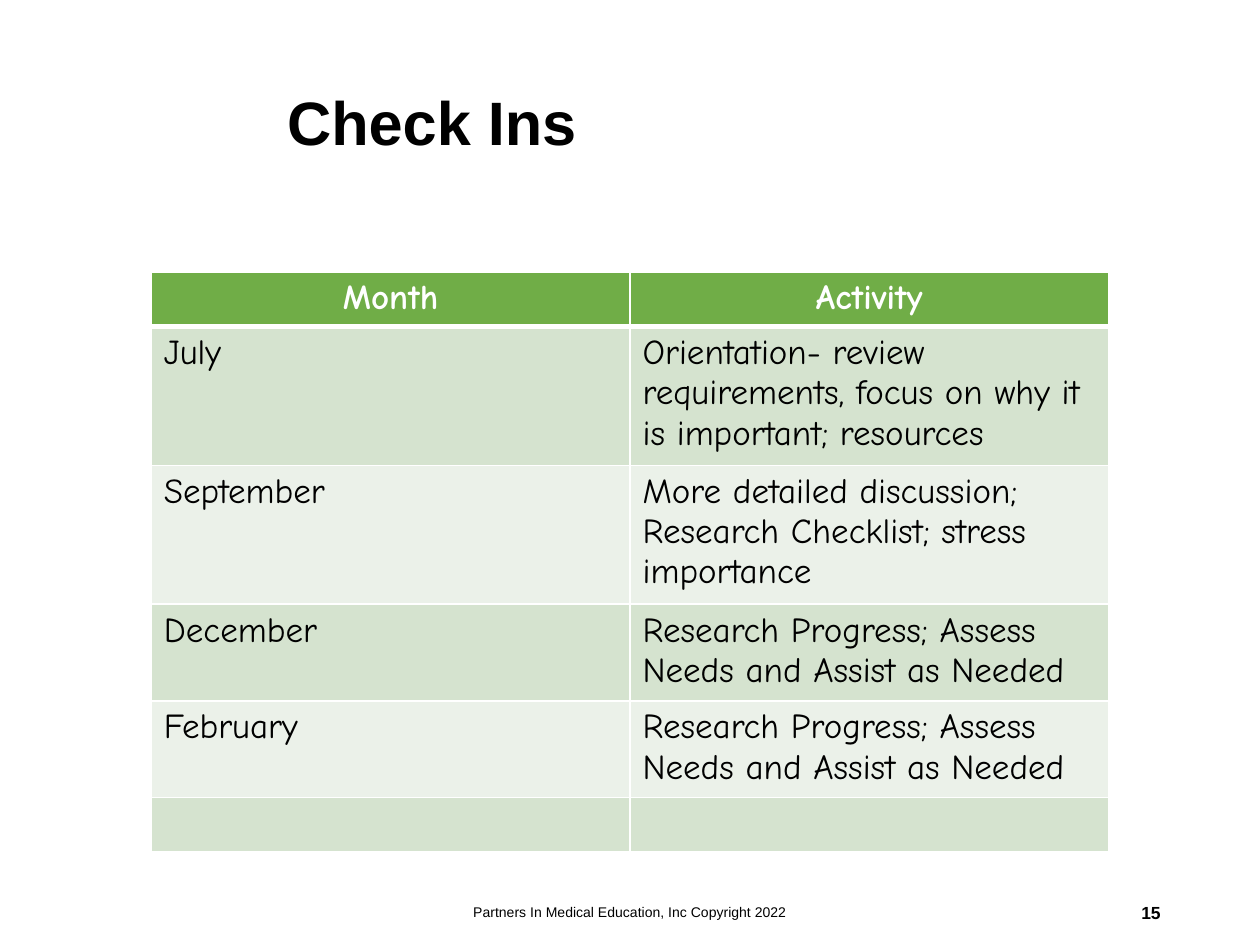
from lxml import etree
from pptx import Presentation
from pptx.dml.color import RGBColor
from pptx.enum.text import MSO_ANCHOR, PP_ALIGN
from pptx.oxml.ns import qn
from pptx.util import Inches, Pt

LEFT, CENTER, RIGHT = PP_ALIGN.LEFT, PP_ALIGN.CENTER, PP_ALIGN.RIGHT
MIDDLE = MSO_ANCHOR.MIDDLE

BLACK = RGBColor(0x00, 0x00, 0x00)
WHITE = RGBColor(0xFF, 0xFF, 0xFF)
GREEN = RGBColor(0x70, 0xAD, 0x47)
BAND_DARK = RGBColor(0xD5, 0xE3, 0xCF)
BAND_LIGHT = RGBColor(0xEB, 0xF1, 0xE9)

TITLE = "Check Ins"
COPYRIGHT = "Partners In Medical Education, Inc Copyright 2022"
PAGE_NUMBER = "15"
PROGRESS = "Research Progress; Assess Needs and Assist as Needed"
# Row height in inches, month, activity
SCHEDULE = [
    (0.41, "Month", "Activity"),
    (1.06, "July", "Orientation- review requirements, focus on why it "
                   "is important; resources"),
    (1.06, "September", "More detailed discussion; Research Checklist; "
                        "stress importance"),
    (0.74, "December", PROGRESS),
    (0.74, "February", PROGRESS),
    (0.41, "", ""),
]
TABLE_LEFT, TABLE_TOP, COLUMN_WIDTH = 1.2, 2.16, 3.8
THIN, THICK = 1, 3


def write(frame, text, size, font="Arial", color=BLACK, bold=False,
          align=LEFT, line_spacing=None):
    paragraph = frame.paragraphs[0]
    paragraph.alignment = align
    paragraph.line_spacing = line_spacing
    if not text:
        paragraph.font.size = Pt(size)
        return
    run = paragraph.add_run()
    run.text = text
    run.font.size = Pt(size)
    run.font.name = font
    run.font.bold = bold
    run.font.color.rgb = color


def add_text(slide, box, text, size, **text_format):
    frame = slide.shapes.add_textbox(*map(Inches, box)).text_frame
    frame.word_wrap = True
    frame.vertical_anchor = MIDDLE
    write(frame, text, size, **text_format)


def set_borders(cell, top, bottom):
    """Draw white borders; top and bottom are widths in points."""
    properties = cell._tc.get_or_add_tcPr()
    for side, width in (("L", THIN), ("R", THIN), ("T", top), ("B", bottom)):
        line = etree.SubElement(properties, qn(f"a:ln{side}"), w=str(Pt(width)))
        fill = etree.SubElement(line, qn("a:solidFill"))
        etree.SubElement(fill, qn("a:srgbClr"), val=str(WHITE))


def add_schedule(slide):
    height = sum(row[0] for row in SCHEDULE)
    table = slide.shapes.add_table(
        len(SCHEDULE), 2, Inches(TABLE_LEFT), Inches(TABLE_TOP),
        Inches(2 * COLUMN_WIDTH), Inches(height)).table
    for row, (row_height, *texts) in enumerate(SCHEDULE):
        table.rows[row].height = Inches(row_height)
        header = row == 0
        band = GREEN if header else BAND_DARK if row % 2 else BAND_LIGHT
        for column, text in enumerate(texts):
            cell = table.cell(row, column)
            set_borders(cell, top=THICK if row == 1 else THIN,
                        bottom=THICK if header else THIN)
            cell.fill.solid()
            cell.fill.fore_color.rgb = band
            write(cell.text_frame, text, 20, font="Comic Neue", bold=header,
                  color=WHITE if header else BLACK,
                  align=CENTER if header else LEFT)


def main():
    deck = Presentation()
    deck.slide_width, deck.slide_height = Inches(10), Inches(7.5)
    slide = deck.slides.add_slide(deck.slide_layouts[6])
    add_text(slide, (2.18, 0.27, 7.14, 1.45), TITLE, 35, bold=True,
             line_spacing=0.9)
    add_text(slide, (3.31, 7.04, 3.38, 0.4), COPYRIGHT, 8, align=CENTER)
    add_text(slide, (7.06, 7.04, 2.25, 0.4), PAGE_NUMBER, 10, bold=True,
             align=RIGHT)
    add_schedule(slide)
    deck.save("out.pptx")


if __name__ == "__main__":
    main()
